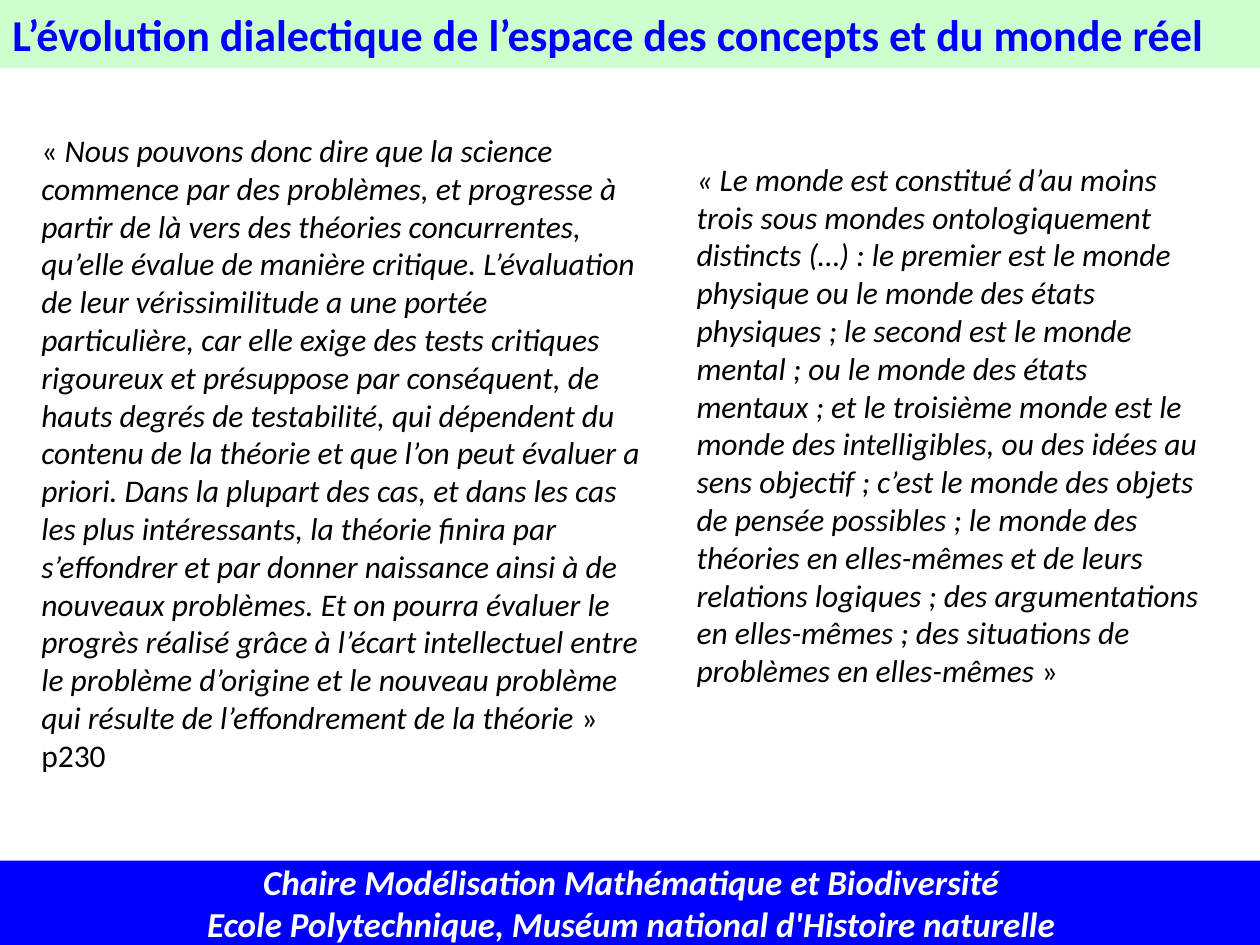
from pptx import Presentation
from pptx import util as u
from pptx.dml.color import RGBColor
from pptx.enum import shapes, text

PALE_GREEN = RGBColor(0xCC, 0xFF, 0xCC)
BLUE = RGBColor(0x00, 0x00, 0xFF)
WHITE = RGBColor(0xFF, 0xFF, 0xFF)
BLACK = RGBColor(0x00, 0x00, 0x00)
FONT = "Calibri"
WIDTH, HEIGHT = 10, 7.5
BAND_WIDTH = 10.02

TITLE = "L’évolution dialectique de l’espace des concepts et du monde réel"
CREDITS = [
    "Chaire Modélisation Mathématique et Biodiversité",
    "Ecole Polytechnique, Muséum national d'Histoire naturelle",
]
# Each quotation is a list of (wording, italic) pairs.
SCIENCE_QUOTE = [
    ("« ", False),
    ("Nous pouvons donc dire que la science commence par des problèmes, et "
     "progresse à partir de là vers des théories concurrentes, qu’elle évalue "
     "de manière critique. L’évaluation de leur vérissimilitude a une portée "
     "particulière, car elle exige des tests critiques rigoureux et présuppose "
     "par conséquent, de hauts degrés de testabilité, qui dépendent du contenu "
     "de la théorie et que l’on peut évaluer a priori. Dans la plupart des cas, "
     "et dans les cas les plus intéressants, la théorie finira par s’effondrer "
     "et par donner naissance ainsi à de nouveaux problèmes. Et on pourra "
     "évaluer le progrès réalisé grâce à l’écart intellectuel entre le problème "
     "d’origine et le nouveau problème qui résulte de l’effondrement de la "
     "théorie", True),
    (" » p230", False),
]
WORLDS_QUOTE = [
    ("« Le monde est constitué d’au moins trois sous mondes ontologiquement "
     "distincts (…) : le premier est le monde physique ou le monde des états "
     "physiques ; le second est le monde mental ; ou le monde des états "
     "mentaux ; et le troisième monde est le monde des intelligibles, ou des "
     "idées au sens objectif ; c’est le monde des objets de pensée possibles ; "
     "le monde des théories en elles-mêmes et de leurs relations logiques ; des "
     "argumentations en elles-mêmes ; des situations de problèmes en "
     "elles-mêmes", True),
    (" »", False),
]


def box(left, top, width, height):
    return [u.Inches(length) for length in (left, top, width, height)]


def style(font, size, color):
    font.name, font.size, font.color.rgb = FONT, u.Pt(size), color


def add_band(slide, area, fill, lines, size, color, align, italic=False):
    band = slide.shapes.add_shape(shapes.MSO_SHAPE.RECTANGLE, *area)
    band.shadow.inherit = False
    band.fill.solid()
    band.fill.fore_color.rgb = fill
    band.line.fill.background()
    frame = band.text_frame
    frame.word_wrap = True
    frame.vertical_anchor = text.MSO_ANCHOR.MIDDLE
    paragraph = frame.paragraphs[0]
    paragraph.alignment = align
    style(paragraph.font, size, color)
    paragraph.font.bold = True
    paragraph.font.italic = italic
    for index, line in enumerate(lines):
        if index:
            paragraph.add_line_break()
        paragraph.add_run().text = line


def add_quote(slide, area, pieces):
    frame = slide.shapes.add_textbox(*area).text_frame
    frame.word_wrap = True
    frame.auto_size = text.MSO_AUTO_SIZE.SHAPE_TO_FIT_TEXT
    paragraph = frame.paragraphs[0]
    style(paragraph.font, 18, BLACK)
    for wording, italic in pieces:
        run = paragraph.add_run()
        run.text = wording
        run.font.italic = italic


def main():
    deck = Presentation()
    deck.slide_width, deck.slide_height = u.Inches(WIDTH), u.Inches(HEIGHT)
    slide = deck.slides.add_slide(deck.slide_layouts[6])

    footer_height = 0.67
    add_quote(slide, box(0.23, 0.99, WIDTH / 2, 0.7 * HEIGHT), SCIENCE_QUOTE)
    add_band(slide, box(0, 0, BAND_WIDTH, 0.54), PALE_GREEN, [TITLE],
             25.2, BLUE, text.PP_ALIGN.LEFT)
    add_band(slide, box(0, HEIGHT - footer_height, BAND_WIDTH, footer_height),
             BLUE, CREDITS, 20, WHITE, text.PP_ALIGN.CENTER, italic=True)
    add_quote(slide, box(5.43, 1.22, 4.24, 4.34), WORLDS_QUOTE)

    deck.save("out.pptx")


if __name__ == "__main__":
    main()
